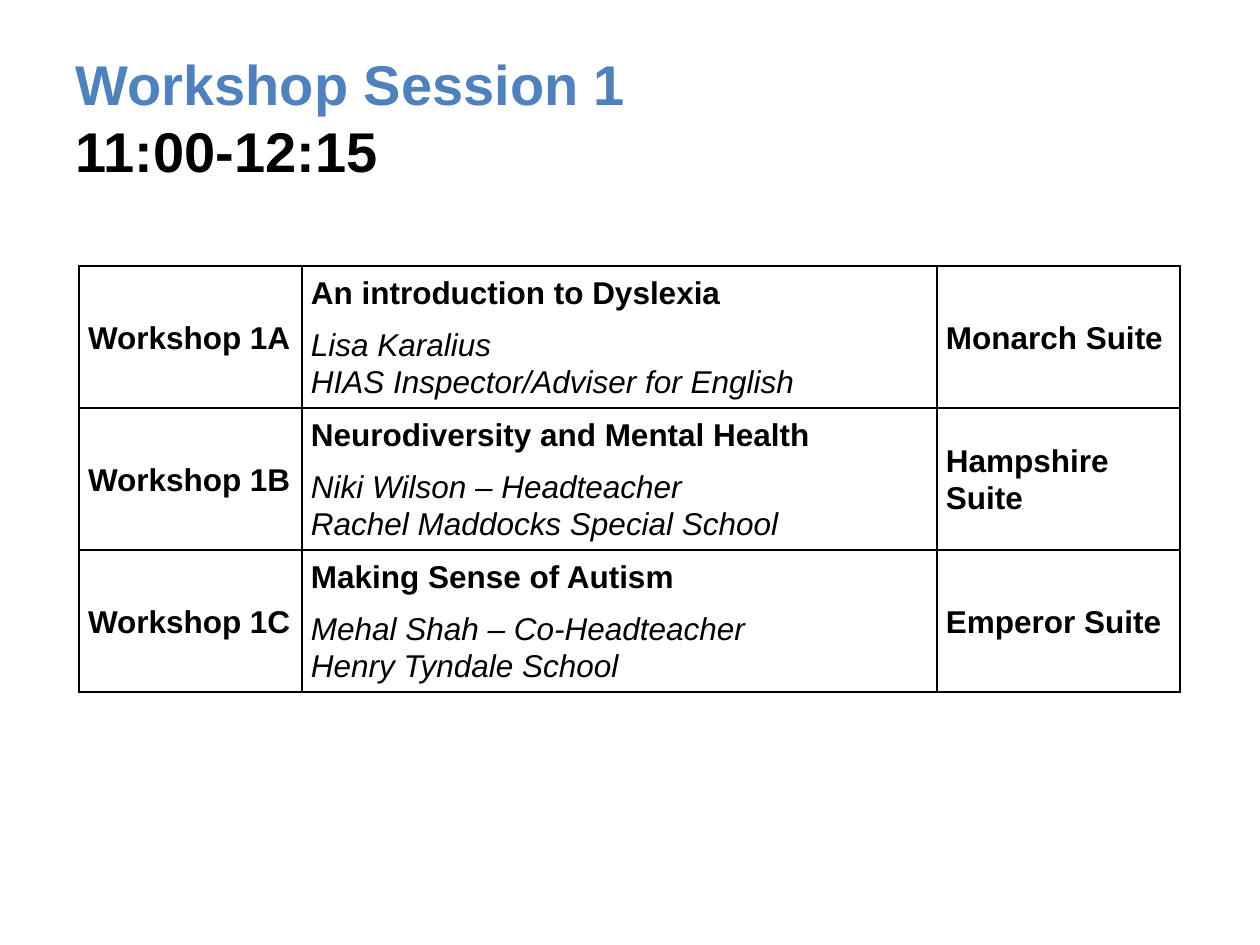
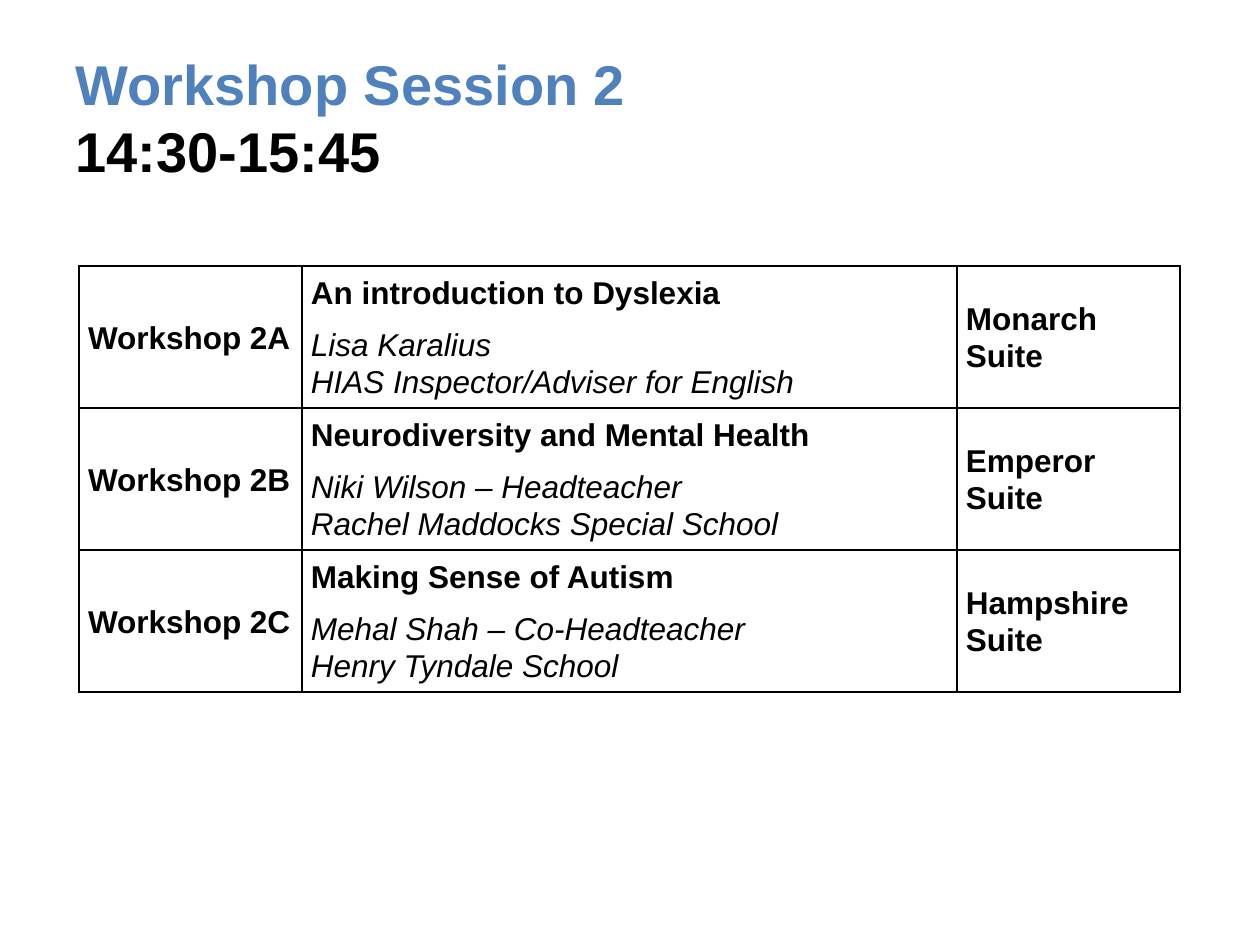
from copy import deepcopy

from lxml.etree import SubElement
from pptx import Presentation
from pptx.dml.color import RGBColor
from pptx.enum.text import MSO_ANCHOR, MSO_AUTO_SIZE, PP_ALIGN
from pptx.oxml.ns import qn
from pptx.util import Emu, Pt

BLUE = RGBColor(0x4F, 0x81, 0xBD)
BLACK = RGBColor(0x00, 0x00, 0x00)
FONT = "Arial"
BORDER_WIDTH = Pt(1)

TALKS = [
    ("An introduction to Dyslexia",
     "Lisa Karalius\nHIAS Inspector/Adviser for English"),
    ("Neurodiversity and Mental Health",
     "Niki Wilson – Headteacher\nRachel Maddocks Special School"),
    ("Making Sense of Autism",
     "Mehal Shah – Co-Headteacher\nHenry Tyndale School"),
]
SESSIONS = [
    {"number": 1, "time": "11:00-12:15", "column_widths": (223, 635, 243),
     "rooms": ("Monarch Suite", "Hampshire Suite", "Emperor Suite")},
    {"number": 2, "time": "14:30-15:45", "column_widths": (223, 655, 223),
     "rooms": ("Monarch Suite", "Emperor Suite", "Hampshire Suite")},
]

SLIDE_WIDTH, SLIDE_HEIGHT = 1260, 945
TITLE_BOX = (63, 38, 844, 158)
TABLE_LEFT, TABLE_TOP, ROW_HEIGHT = 79, 266, 142
CELL_MARGIN = 9


def px(length):
    """Convert pixels, at 126 to the inch, to EMU."""
    return Emu(round(length * 914400 / 126))


def add_text(paragraph, text, size=18, color=BLACK, bold=True, italic=False):
    """Add runs to a paragraph, with a formatted line break at each newline."""
    for index, line in enumerate(text.split("\n")):
        if index:
            paragraph.add_line_break()
            paragraph._p[-1].append(deepcopy(run._r.rPr))
        run = paragraph.add_run()
        run.text = line
        font = run.font
        font.name, font.size = FONT, Pt(size)
        font.bold, font.italic = bold, italic
        font.color.rgb = color


def add_title(slide, session):
    title = slide.shapes.title
    title.left, title.top, title.width, title.height = map(px, TITLE_BOX)
    frame = title.text_frame
    frame.auto_size = MSO_AUTO_SIZE.NONE
    frame.word_wrap = True
    frame.vertical_anchor = MSO_ANCHOR.MIDDLE
    paragraph = frame.paragraphs[0]
    paragraph.alignment = PP_ALIGN.LEFT
    add_text(paragraph, f"Workshop Session {session['number']}\n", size=32, color=BLUE)
    paragraph.runs[-1].text = session["time"]
    paragraph.runs[-1].font.color.rgb = BLACK


def set_borders(cell):
    properties = cell._tc.get_or_add_tcPr()
    for index, side in enumerate(("lnL", "lnR", "lnT", "lnB")):
        line = properties.makeelement(qn(f"a:{side}"), {"w": str(BORDER_WIDTH)})
        fill = SubElement(line, qn("a:solidFill"))
        SubElement(fill, qn("a:srgbClr"), val=str(BLACK))
        properties.insert(index, line)


def fill_cell(cell, heading, details=None):
    cell.fill.background()
    set_borders(cell)
    cell.vertical_anchor = MSO_ANCHOR.MIDDLE
    cell.margin_left = cell.margin_right = px(CELL_MARGIN)
    cell.margin_top = cell.margin_bottom = 0
    frame = cell.text_frame
    add_text(frame.paragraphs[0], heading)
    if details:
        add_text(frame.add_paragraph(), details, bold=False, italic=True)
    for paragraph in frame.paragraphs:
        paragraph.line_spacing = 1.07
        paragraph.space_after = Pt(8)


def add_schedule(slide, session):
    widths = session["column_widths"]
    table = slide.shapes.add_table(
        len(TALKS), len(widths), px(TABLE_LEFT), px(TABLE_TOP),
        px(sum(widths)), px(ROW_HEIGHT * len(TALKS))).table
    table.first_row = table.horz_banding = False
    for column, width in zip(table.columns, widths):
        column.width = px(width)
    for index, (talk, room) in enumerate(zip(TALKS, session["rooms"])):
        table.rows[index].height = px(ROW_HEIGHT)
        workshop = f"Workshop {session['number']}{'ABC'[index]}"
        for column, content in enumerate(((workshop,), talk, (room,))):
            fill_cell(table.cell(index, column), *content)


def main():
    presentation = Presentation()
    presentation.slide_width = px(SLIDE_WIDTH)
    presentation.slide_height = px(SLIDE_HEIGHT)
    title_only = presentation.slide_layouts.get_by_name("Title Only")
    for session in SESSIONS:
        slide = presentation.slides.add_slide(title_only)
        add_title(slide, session)
        add_schedule(slide, session)
    presentation.save("out.pptx")


if __name__ == "__main__":
    main()
